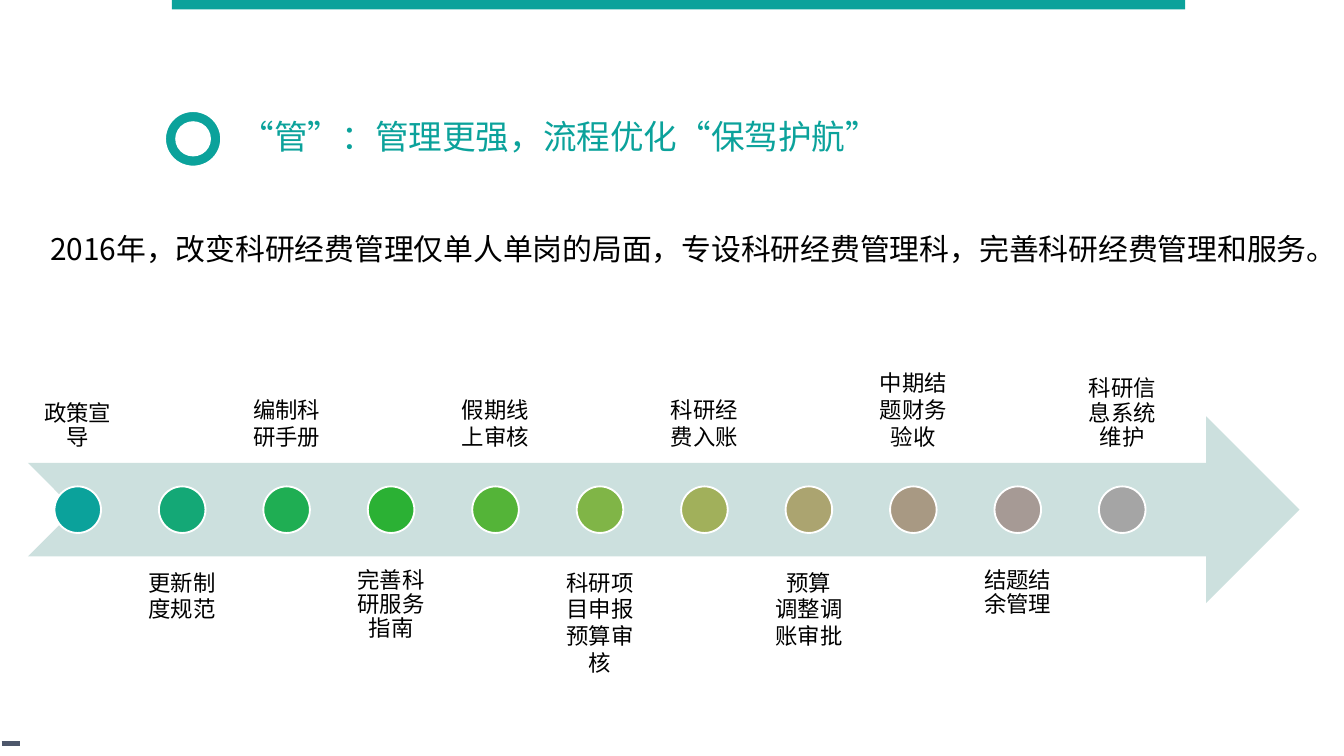
from lxml import etree
from pptx import Presentation
from pptx.dml.color import RGBColor
from pptx.enum.shapes import MSO_CONNECTOR as Connector, MSO_SHAPE as Shape
from pptx.enum.text import MSO_ANCHOR as Anchor, MSO_AUTO_SIZE as AutoSize, PP_ALIGN as Align
from pptx.oxml.ns import qn
from pptx.util import Cm, Pt

FONT = "Noto Sans CJK SC"
COLORS = {"teal": "0BA29B", "arrow": "CCE0DE", "slate": "4D576B",
          "white": "FFFFFF", "black": "000000"}

# label, dot colour, line spacing; labels alternate above and below the arrow
STEPS = [
    ("政策宣导", "0BA29B", 0.9),
    ("更新制度规范", "14A876", 1.0),
    ("编制科研手册", "1FAE53", 1.0),
    ("完善科研服务指南", "2BB134", 0.9),
    ("假期线上审核", "54B438", 1.0),
    ("科研项目申报预算审核", "80B547", 1.0),
    ("科研经费入账", "A1B05B", 1.0),
    ("预算\v调整调账审批", "ABA470", 1.0),
    ("中期结题财务验收", "A89983", 1.0),
    ("结题结余管理", "A69A95", 0.9),
    ("科研信息系统维护", "A5A5A5", 0.9),
]
FIRST_CENTER, LAST_CENTER = 1.47, 21.21
ARROW_TOP, ARROW_HEIGHT = 7.87, 3.53
DOT = 0.88
LABEL_WIDTH, LABEL_HEIGHT = 1.88, 3.53
LABEL_TOPS = (5.21, 10.52)
LABEL_ANCHORS = (Anchor.BOTTOM, Anchor.TOP)


def rgb(color):
    return RGBColor.from_string(color)


def add_figure(slide, preset, box, fill, outline=None):
    figure = slide.shapes.add_shape(preset, *map(Cm, box))
    figure.shadow.inherit = False
    figure.fill.solid()
    figure.fill.fore_color.rgb = rgb(fill)
    if outline:
        figure.line.color.rgb = rgb(outline)
        figure.line.width = Pt(1)
    else:
        figure.line.fill.background()
    return figure


def write_text(holder, text, size, color, align=Align.LEFT, anchor=Anchor.TOP,
               wrap=False, insets=(0.18, 0.1), spacing=1.0):
    """Fill a text box or placeholder; insets are (sides, top and bottom)."""
    frame = holder.text_frame
    frame.text = text
    side, edge = map(Cm, insets)
    frame_format = {
        "word_wrap": wrap, "vertical_anchor": anchor, "auto_size": AutoSize.NONE,
        "margin_left": side, "margin_right": side,
        "margin_top": edge, "margin_bottom": edge,
    }
    for name, value in frame_format.items():
        setattr(frame, name, value)
    paragraph = frame.paragraphs[0]
    paragraph.alignment = align
    paragraph.line_spacing = spacing
    for run in paragraph.runs:
        run.font.size = Pt(size)
        run.font.name = FONT
        run.font.color.rgb = rgb(color)
        east_asian = etree.SubElement(run.font._element, qn("a:ea"))
        east_asian.set("typeface", FONT)


def place(holder, box):
    for name, value in zip(("left", "top", "width", "height"), box):
        setattr(holder, name, Cm(value))


def add_text(slide, box, text, size, color, **text_format):
    holder = slide.shapes.add_textbox(*map(Cm, box))
    write_text(holder, text, size, color, **text_format)


def add_corner_dash(slide):
    dash = slide.shapes.add_connector(
        Connector.STRAIGHT, Cm(0.03), Cm(14.05), Cm(0.38), Cm(14.05))
    dash.line.color.rgb = rgb(COLORS["slate"])
    dash.line.width = Pt(3)
    etree.SubElement(dash._element.spPr, qn("a:effectLst"))


def add_timeline(slide):
    add_figure(slide, Shape.NOTCHED_RIGHT_ARROW,
               (0.53, ARROW_TOP, 24.03, ARROW_HEIGHT), COLORS["arrow"])
    gap = (LAST_CENTER - FIRST_CENTER) / (len(STEPS) - 1)
    dot_top = ARROW_TOP + (ARROW_HEIGHT - DOT) / 2
    for index, (label, color, spacing) in enumerate(STEPS):
        center = FIRST_CENTER + index * gap
        side = index % 2
        add_text(slide,
                 (center - LABEL_WIDTH / 2, LABEL_TOPS[side], LABEL_WIDTH, LABEL_HEIGHT),
                 label, 12, COLORS["black"], align=Align.CENTER, wrap=True,
                 anchor=LABEL_ANCHORS[side], insets=(0.23, 0.23), spacing=spacing)
        add_figure(slide, Shape.OVAL, (center - DOT / 2, dot_top, DOT, DOT),
                   color, COLORS["white"])


def main():
    deck = Presentation()
    deck.slide_width, deck.slide_height = Cm(25.4), Cm(14.29)
    slide = deck.slides.add_slide(deck.slide_layouts.get_by_name("Title Only"))

    add_figure(slide, Shape.RECTANGLE, (3.25, 0, 19.15, 0.18), COLORS["teal"])
    add_corner_dash(slide)
    ring = add_figure(slide, Shape.DONUT, (3.12, 2.1, 1.06, 1.05),
                      COLORS["teal"], COLORS["white"])
    ring.adjustments[0] = 0.2

    title = slide.shapes.title
    place(title, (4.37, 2.1, 12.57, 0.97))
    write_text(title, "“管”：管理更强，流程优化“保驾护航”", 18, COLORS["teal"])
    add_timeline(slide)
    add_text(slide, (0.77, 4.27, 25.1, 0.89),
             "2016年，改变科研经费管理仅单人单岗的局面，专设科研经费管理科，完善科研经费管理和服务。",
             16, COLORS["black"])
    deck.save("out.pptx")


if __name__ == "__main__":
    main()
